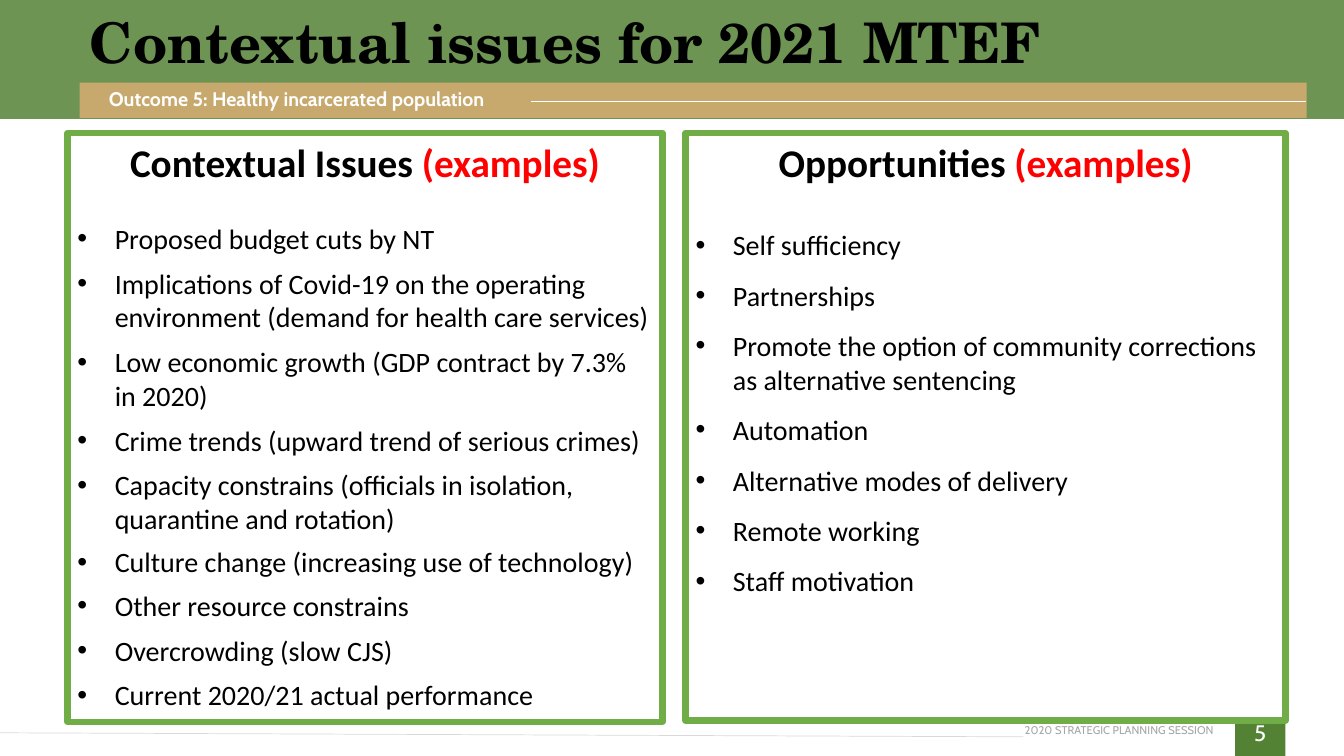
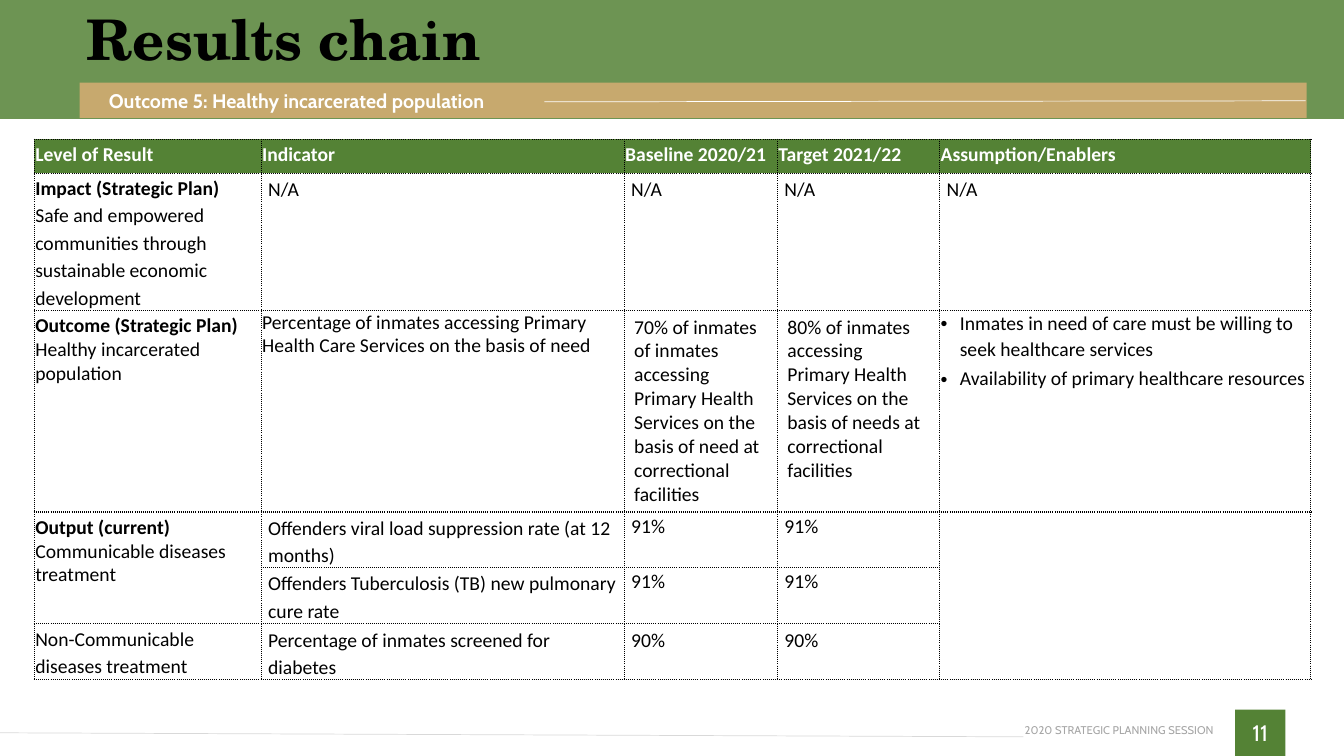
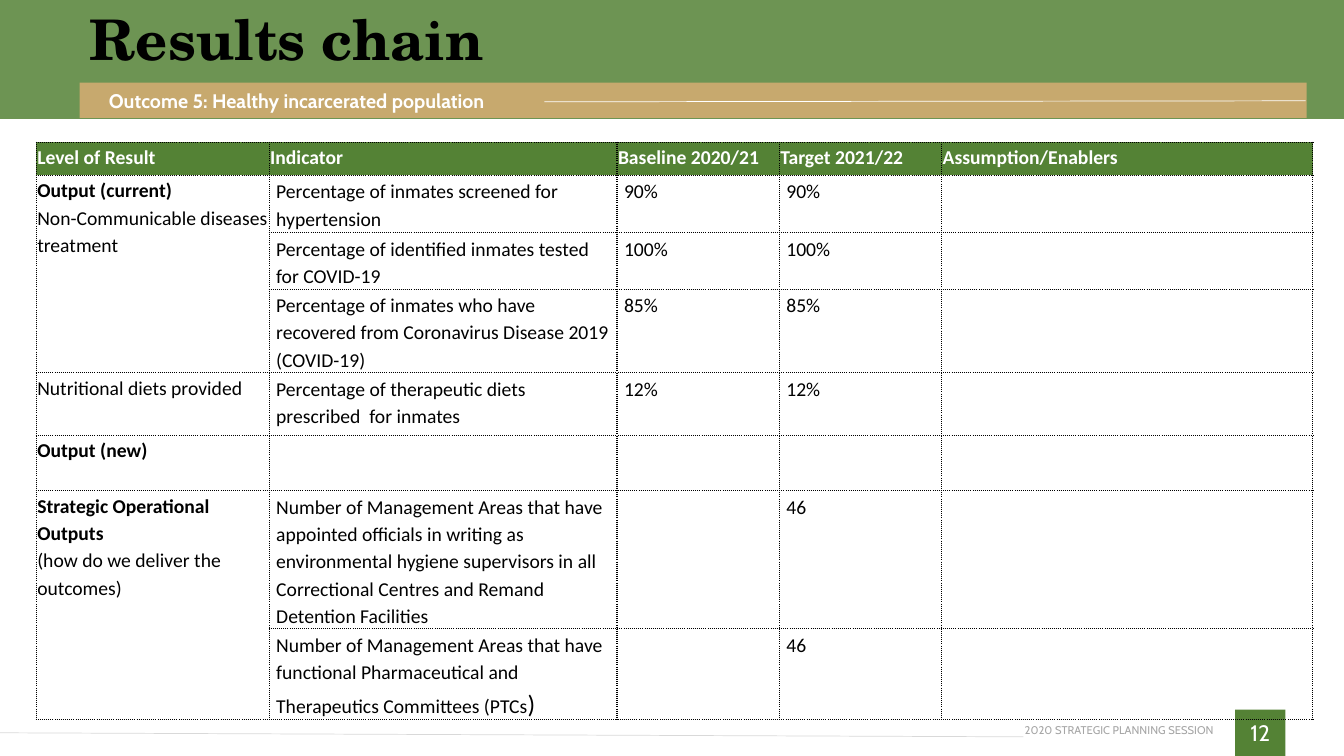
from lxml import etree
from pptx import Presentation
from pptx.dml.color import RGBColor
from pptx.enum.shapes import MSO_CONNECTOR as Connector, MSO_SHAPE as Shape
from pptx.enum.text import MSO_ANCHOR as Anchor, PP_ALIGN as Align
from pptx.oxml.ns import qn
from pptx.util import Inches, Pt

WIDTH, HEIGHT = 13.33, 7.5
COLORS = {
    "white": "FFFFFF", "black": "000000", "red": "FF0000",
    "green": "548235", "frame": "70AD47", "sand": "C7A96E",
    "footer": "A6A6A6", "rule": "D9D9D9",
}
TITLE_FONT, BAND_FONT, BODY_FONT = "TeX Gyre Schola", "Cabin", "Calibri"
NO_INSET = (0, 0, 0, 0)
BOX_INSET = (0.1, 0.05, 0.1, 0.05)

# Shared wording
OUTCOME = "Outcome 5: Healthy incarcerated population"
SESSION = "2020 STRATEGIC PLANNING SESSION"
HEADER = ["Level of Result", "Indicator", "Baseline 2020/21",
          "Target 2021/22", "Assumption/Enablers"]

# Cell styles: insets (left, top, right, bottom) and line spacing
CELL_STYLES = {
    "flush": ((0.01, 0, 0.01, 0), 1.15),
    "tight": ((0.01, 0, 0.01, 0), 1.0),
    "bullets": ((0.01, 0, 0.01, 0), 1.07),
    "inset": ((0.07, 0.01, 0.07, 0), 1.15),
    "compact": ((0.07, 0.01, 0.07, 0), 1.07),
    "roomy": (BOX_INSET, 1.0),
}


def cell(*texts, style="inset", head=""):
    return {"texts": texts, "style": style, "head": head}


def level(head, *texts, style="flush"):
    return cell(*texts, style=style, head=head)


# Content of the slides
PANELS = [
    {"at": (0.67, 1.32, 5.9, 5.84), "head": "Contextual Issues ",
     "head_gap": 22, "gap": 4, "items": [
         "Proposed budget cuts by NT",
         "Implications of Covid-19 on the operating environment "
         "(demand for health care services)",
         "Low economic growth (GDP contract by 7.3% in 2020)",
         "Crime trends (upward trend of serious crimes)",
         "Capacity constrains (officials in isolation, quarantine and rotation)",
         ("Culture change (increasing use of technology)", 3),
         "Other resource constrains",
         "Overcrowding (slow CJS)",
         "Current 2020/21 actual performance"]},
    {"at": (6.8, 1.32, 5.95, 5.83), "head": "Opportunities ",
     "head_gap": 24.4, "gap": 6, "items": [
         "Self sufficiency",
         "Partnerships",
         "Promote the option of community corrections as alternative sentencing",
         "Automation",
         "Alternative modes of delivery",
         "Remote working",
         "Staff motivation"]},
]

STRATEGY_TABLE = {
    "at": (0.34, 1.38),
    "columns": [2.25, 3.6, 1.52, 1.61, 3.68],
    "heights": [0.34, 1.36, 2, 0.55, 0.56, 0.55],
    "spans": [(3, 0, 4, 0), (3, 4, 5, 4)],
    "rows": [
        [level("Impact (Strategic Plan)",
               "Safe and empowered communities through sustainable "
               "economic development")] + [cell("N/A")] * 4,
        [level("Outcome (Strategic Plan)", "Healthy incarcerated population",
               style="tight"),
         cell("Percentage of inmates accessing Primary Health Care Services "
              "on the basis of need", style="tight"),
         cell("70% of inmates of inmates accessing Primary Health Services "
              "on the basis of need at correctional facilities", style="roomy"),
         cell("80% of inmates accessing Primary Health Services on the basis "
              "of needs at correctional facilities", style="roomy"),
         cell("Inmates in need of care must be willing to seek healthcare "
              "services", "Availability of primary healthcare resources",
              style="bullets")],
        [level("Output (current)", "Communicable diseases treatment",
               style="tight"),
         cell("Offenders viral load suppression rate (at 12 months)"),
         cell("91%", style="compact"), cell("91%", style="compact"), None],
        [None, cell("Offenders Tuberculosis (TB) new pulmonary cure rate"),
         cell("91%", style="compact"), cell("91%", style="compact"), None],
        [level("", "Non-Communicable diseases treatment"),
         cell("Percentage of inmates screened for diabetes"),
         cell("90%"), cell("90%"), None],
    ],
}

OUTPUT_TABLE = {
    "at": (0.36, 1.41),
    "columns": [2.31, 3.45, 1.61, 1.61, 3.68],
    "heights": [0.33, 0.57, 0.56, 0.83, 0.62, 0.55, 1.37, 0.9],
    "spans": [(1, 0, 3, 0), (6, 0, 7, 0)],
    "rows": [
        [level("Output (current)", "Non-Communicable diseases treatment"),
         cell("Percentage of inmates screened for hypertension"),
         cell("90%"), cell("90%"), None],
        [None, cell("Percentage of identified inmates tested for COVID-19"),
         cell("100%"), cell("100%"), None],
        [None, cell("Percentage of inmates who have recovered from "
                    "Coronavirus Disease 2019 (COVID-19)"),
         cell("85%"), cell("85%"), None],
        [level("", "Nutritional diets provided"),
         cell("Percentage of therapeutic diets prescribed  for inmates"),
         cell("12%"), cell("12%"), None],
        [level("Output (new)"), None, None, None, None],
        [level("Strategic Operational Outputs",
               "(how do we deliver the outcomes)"),
         cell("Number of Management Areas that have appointed officials in "
              "writing as environmental hygiene supervisors in all "
              "Correctional Centres and Remand Detention Facilities"),
         None, cell("46"), None],
        [None,
         cell((("Number of Management Areas that have functional "
                "Pharmaceutical and Therapeutics Committees (PTCs", 14),
               (")", 18))),
         None, cell("46"), None],
    ],
}

PAGES = [
    {"number": 5, "title": "Contextual issues for 2021 MTEF",
     "title_at": (0.79, 0, 11.96, 0.9), "outcome_top": 0.86,
     "rule": (5.27, 1.01, 12.95, 1.01), "panels": PANELS},
    {"number": 11, "title": "Results chain",
     "title_at": (0.76, 0.12, 11.82, 0.59), "table": STRATEGY_TABLE},
    {"number": 12, "title": "Results chain",
     "title_at": (0.79, 0.12, 11.78, 0.59), "table": OUTPUT_TABLE},
]


# Drawing helpers
def color(name):
    return RGBColor.from_string(COLORS[name])


def inches(values):
    return [Inches(value) for value in values]


def add_span(para, text, size, shade, font=BODY_FONT, bold=False):
    span = para.add_run()
    span.text = text
    span.font.size = Pt(size)
    span.font.name = font
    span.font.bold = bold
    span.font.color.rgb = color(shade)


def add_bullet(para, indent):
    props = para._p.get_or_add_pPr()
    props.set("marL", str(Inches(indent)))
    props.set("indent", str(-Inches(indent)))
    etree.SubElement(props, qn("a:buFont")).set("typeface", "Arial")
    etree.SubElement(props, qn("a:buChar")).set("char", "•")


def set_insets(target, insets):
    (target.margin_left, target.margin_top,
     target.margin_right, target.margin_bottom) = inches(insets)


def next_para(frame, index):
    return frame.add_paragraph() if index else frame.paragraphs[0]


def add_rect(page, at, fill, line=None, line_width=1):
    box = page.shapes.add_shape(Shape.RECTANGLE, *inches(at))
    box.shadow.inherit = False
    box.fill.solid()
    box.fill.fore_color.rgb = color(fill)
    if line:
        box.line.color.rgb = color(line)
        box.line.width = Pt(line_width)
    else:
        box.line.fill.background()
    return box


def add_rule(page, ends, shade):
    rule = page.shapes.add_connector(Connector.STRAIGHT, *inches(ends))
    rule.line.color.rgb = color(shade)
    rule.line.width = Pt(0.5)
    etree.SubElement(rule.element.spPr, qn("a:effectLst"))


def add_label(page, at, text, size, shade, font, bold=False,
              align=Align.LEFT, insets=NO_INSET):
    frame = page.shapes.add_textbox(*inches(at)).text_frame
    frame.word_wrap = True
    frame.vertical_anchor = Anchor.MIDDLE
    set_insets(frame, insets)
    para = frame.paragraphs[0]
    para.alignment = align
    add_span(para, text, size, shade, font, bold)
    return para


# Parts shared by every slide
def add_footer(page, number):
    badge = add_rect(page, (12.25, 7.04, 0.5, 0.46), "green")
    badge.text_frame.vertical_anchor = Anchor.MIDDLE
    para = badge.text_frame.paragraphs[0]
    para.alignment = Align.CENTER
    add_span(para, str(number), 16, "white", BAND_FONT)
    add_label(page, (10.15, 7.18, 1.89, 0.13), SESSION, 8, "footer",
              BAND_FONT, align=Align.RIGHT)
    add_rule(page, (10.15, 7.31, 0, 7.27), "rule")


def add_heading(page, content):
    band = add_rect(page, (0, 0, WIDTH, 1.18), "green")
    shade = band.element.spPr.find(qn("a:solidFill"))[0]
    etree.SubElement(shade, qn("a:alpha")).set("val", "85000")
    title = add_label(page, content["title_at"], content["title"], 40, "black",
                      TITLE_FONT, bold=True, insets=BOX_INSET)
    title.line_spacing = 0.9
    add_rect(page, (0.79, 0.82, 12.17, 0.35), "sand")
    add_rule(page, content.get("rule", (5.4, 1.01, 12.95, 1)), "white")
    outcome = add_label(page, (1.08, content.get("outcome_top", 0.88), 7, 0.24),
                        OUTCOME, 14, "white", BAND_FONT, bold=True)
    outcome.space_after = Pt(3)


# Framed bullet lists
def add_panel(page, panel):
    frame = add_rect(page, panel["at"], "white", "frame", 4.5).text_frame
    frame.word_wrap = True
    frame.vertical_anchor = Anchor.TOP
    head = frame.paragraphs[0]
    head.alignment = Align.CENTER
    head.space_after = Pt(panel["head_gap"])
    add_span(head, panel["head"], 28, "black", bold=True)
    add_span(head, "(examples)", 28, "red", bold=True)
    for item in panel["items"]:
        text, gap = item if isinstance(item, tuple) else (item, panel["gap"])
        para = frame.add_paragraph()
        para.alignment = Align.LEFT
        para.space_before = para.space_after = Pt(gap)
        add_bullet(para, 0.37)
        add_span(para, text, 20, "black")


# Results tables
def add_borders(box):
    props = box._tc.get_or_add_tcPr()
    for side in ("lnL", "lnR", "lnT", "lnB"):
        line = etree.SubElement(props, qn(f"a:{side}"), w=str(Pt(1)))
        fill = etree.SubElement(line, qn("a:solidFill"))
        etree.SubElement(fill, qn("a:srgbClr")).set("val", COLORS["black"])
        etree.SubElement(line, qn("a:prstDash")).set("val", "sysDot")


def fill_cell(box, content, shade):
    insets, spacing = CELL_STYLES[content["style"]]
    set_insets(box, insets)
    lines = [(text, False, spacing) for text in content["texts"]]
    if content["head"]:
        lines.insert(0, (content["head"], True, 1.15))
    for index, (text, bold, line_spacing) in enumerate(lines):
        para = next_para(box.text_frame, index)
        para.line_spacing = line_spacing
        if content["style"] == "bullets":
            para.space_after = Pt(3)
            add_bullet(para, 0.19)
        for words, size in text if isinstance(text, tuple) else [(text, 14)]:
            add_span(para, words, size, shade, bold=bold)


def add_results(page, results):
    rows = [[level(name) for name in HEADER]] + results["rows"]
    columns, heights = results["columns"], results["heights"]
    size = (sum(columns), sum(heights))
    table = page.shapes.add_table(len(rows), len(columns),
                                  *inches(results["at"] + size)).table
    table.first_row = table.horz_banding = False
    for column, width in zip(table.columns, columns):
        column.width = Inches(width)
    for row, height in zip(table.rows, heights):
        row.height = Inches(height)
    for top, left, bottom, right in results["spans"]:
        table.cell(top, left).merge(table.cell(bottom, right))
    for r, row in enumerate(rows):
        for c, content in enumerate(row):
            box = table.cell(r, c)
            add_borders(box)
            if r == 0:
                box.fill.solid()
                box.fill.fore_color.rgb = color("green")
            else:
                box.fill.background()
            if content:
                fill_cell(box, content, "black" if r else "white")


def main():
    deck = Presentation()
    deck.slide_width, deck.slide_height = inches((WIDTH, HEIGHT))
    for content in PAGES:
        page = deck.slides.add_slide(deck.slide_layouts[6])
        add_footer(page, content["number"])
        add_heading(page, content)
        for panel in content.get("panels", []):
            add_panel(page, panel)
        if "table" in content:
            add_results(page, content["table"])
    deck.save("out.pptx")


if __name__ == "__main__":
    main()
